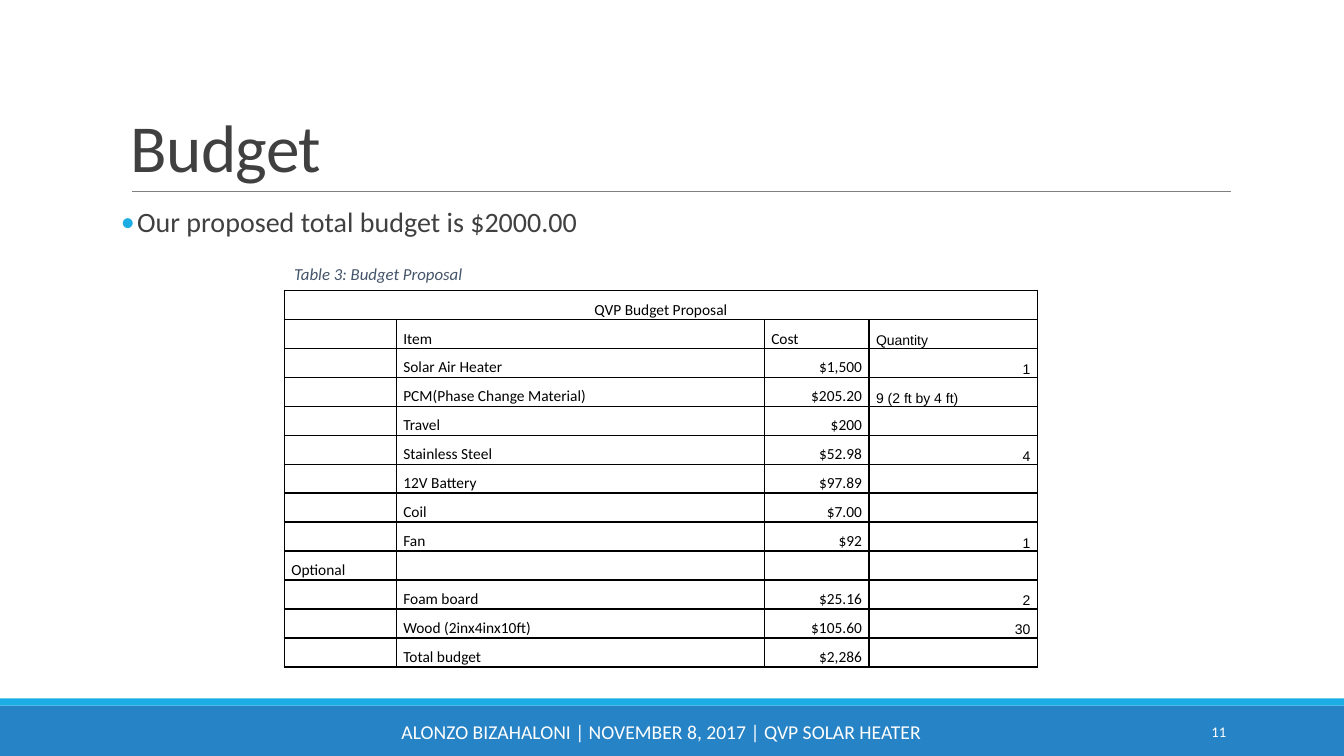
"""Build the budget slide with its proposal table and footer."""
from lxml import etree
from pptx import Presentation
from pptx import util as u
from pptx.dml.color import RGBColor
from pptx.enum import shapes, text
from pptx.oxml import parse_xml
from pptx.oxml.ns import nsdecls, qn

LEFT, CENTER, RIGHT = text.PP_ALIGN.LEFT, text.PP_ALIGN.CENTER, text.PP_ALIGN.RIGHT
TOP, MIDDLE, BOTTOM = text.MSO_ANCHOR.TOP, text.MSO_ANCHOR.MIDDLE, text.MSO_ANCHOR.BOTTOM


def color(value):
    return RGBColor.from_string(value)


def write(para, words, size, tint, align=LEFT, font="Calibri"):
    para.alignment = align
    para.font.size = u.Pt(size)
    para.font.name = font
    para.font.color.rgb = color(tint)
    if words:
        para.add_run().text = words
    return para


deck = Presentation()
deck.slide_width, deck.slide_height = u.Inches(13.33), u.Inches(7.5)
page = deck.slides.add_slide(deck.slide_layouts[6])

for top, height, tint in [(7, 0.5, "2683C6"), (6.93, 0.07, "1CADE4")]:
    band = page.shapes.add_shape(shapes.MSO_SHAPE.RECTANGLE, 0, u.Inches(top),
                                 deck.slide_width, u.Inches(height))
    band.shadow.inherit = False
    band.fill.solid()
    band.fill.fore_color.rgb = color(tint)
    band.line.fill.background()

rule = page.shapes.add_connector(shapes.MSO_CONNECTOR.STRAIGHT, u.Inches(1.31), u.Inches(1.9),
                                 u.Inches(12.21), u.Inches(1.9))
rule.line.color.rgb = color("808080")
rule.line.width = u.Pt(0.5)
etree.SubElement(rule.element.spPr, qn("a:effectLst"))

labels = [
    ("Budget", 1.2, 0.31, 11, 1.59, 48, "404040", LEFT, BOTTOM),
    ("Our proposed total budget is $2000.00", 1.2, 2.02, 11, 0.5, 20, "404040", LEFT, TOP),
    ("11", 10.83, 7.06, 1.43, 0.4, 10.5, "FFFFFF", RIGHT, MIDDLE),
    ("ALONZO BIZAHALONI | NOVEMBER 8, 2017 | QVP SOLAR HEATER",
     3.82, 7.06, 5.48, 0.4, 14, "FFFFFF", CENTER, MIDDLE),
    ("Table 3: Budget Proposal", 2.82, 2.57, 3.57, 0.3, 12, "44546A", LEFT, MIDDLE),
]
boxes = []
for words, left, top, width, height, size, tint, align, anchor in labels:
    box = page.shapes.add_textbox(u.Inches(left), u.Inches(top), u.Inches(width), u.Inches(height))
    box.text_frame.word_wrap = True
    box.text_frame.vertical_anchor = anchor
    write(box.text_frame.paragraphs[0], words, size, tint, align)
    boxes.append(box.text_frame)
title, body, number, footer, caption = boxes

title.paragraphs[0].line_spacing = 0.85
title.paragraphs[0].runs[0].font._element.set("spc", "-50")
caption.paragraphs[0].font.italic = True

body.margin_left = body.margin_right = 0
bullet = body.paragraphs[0]
bullet.line_spacing = 0.9
bullet.space_before, bullet.space_after = u.Pt(12), u.Pt(2)
props = bullet._p.get_or_add_pPr()
props.set("marL", str(u.Inches(0.16)))
props.set("indent", str(u.Inches(-0.16)))
marks = [f'<a:buClr {nsdecls("a")}><a:srgbClr val="1CADE4"/></a:buClr>',
         f'<a:buFont {nsdecls("a")} typeface="Calibri"/>',
         f'<a:buChar {nsdecls("a")} char="•"/>']
for mark in marks:
    props.find(qn("a:defRPr")).addprevious(parse_xml(mark))

rows = [
    ("QVP Budget Proposal", "", "", ""),
    ("", "Item", "Cost", "Quantity"),
    ("", "Solar Air Heater", "$1,500", "1"),
    ("", "PCM(Phase Change Material)", "$205.20", "9 (2 ft by 4 ft)"),
    ("", "Travel", "$200", ""),
    ("", "Stainless Steel", "$52.98", "4"),
    ("", "12V Battery", "$97.89", ""),
    ("", "Coil", "$7.00", ""),
    ("", "Fan", "$92", "1"),
    ("Optional", "", "", ""),
    ("", "Foam board", "$25.16", "2"),
    ("", "Wood (2inx4inx10ft)", "$105.60", "30"),
    ("", "Total budget", "$2,286", ""),
]
frame = page.shapes.add_table(len(rows), 4, u.Inches(2.82), u.Inches(2.88),
                              u.Inches(7.48), u.Inches(3.74))
table = frame.table
table.first_row = table.horz_banding = False
for column, width in zip(table.columns, [1.11, 3.65, 1.04, 1.67]):
    column.width = u.Inches(width)

for r, row in enumerate(rows):
    for c, words in enumerate(row):
        cell = table.cell(r, c)
        cell.margin_left = cell.margin_right = u.Inches(0.07)
        cell.margin_top = cell.margin_bottom = 0
        cell.vertical_anchor = BOTTOM
        for side in ("lnL", "lnR", "lnT", "lnB"):
            cell._tc.get_or_add_tcPr().append(parse_xml(
                f'<a:{side} {nsdecls("a")} w="{u.Pt(1)}"><a:solidFill>'
                f'<a:srgbClr val="000000"/></a:solidFill></a:{side}>'))
        cell.fill.background()
        if r == 0:
            align = CENTER
        else:
            align = RIGHT if words.startswith("$") or words.isdigit() else LEFT
        size, font = (10, "Arial") if c == 3 else (11, "Calibri")
        write(cell.text_frame.paragraphs[0], words, size, "000000", align, font).line_spacing = 1.07
table.cell(0, 0).merge(table.cell(0, 3))

deck.save("out.pptx")
